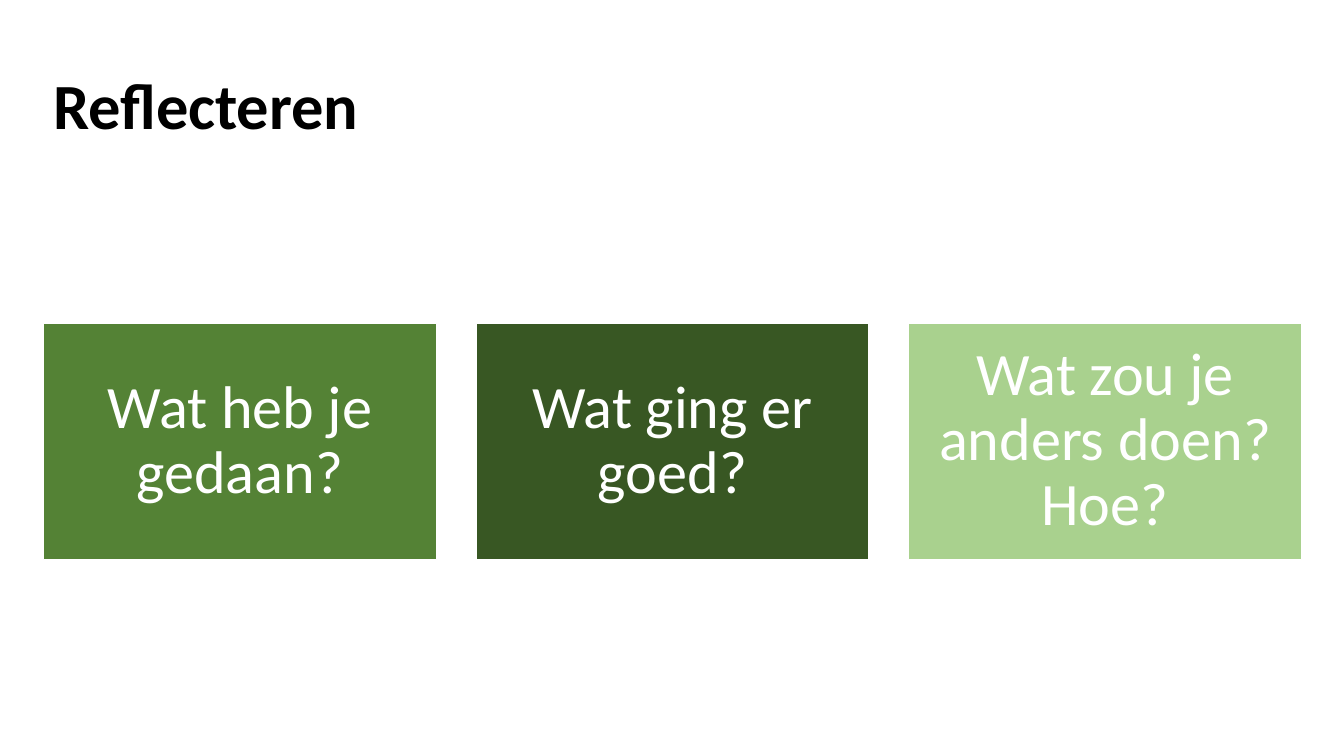
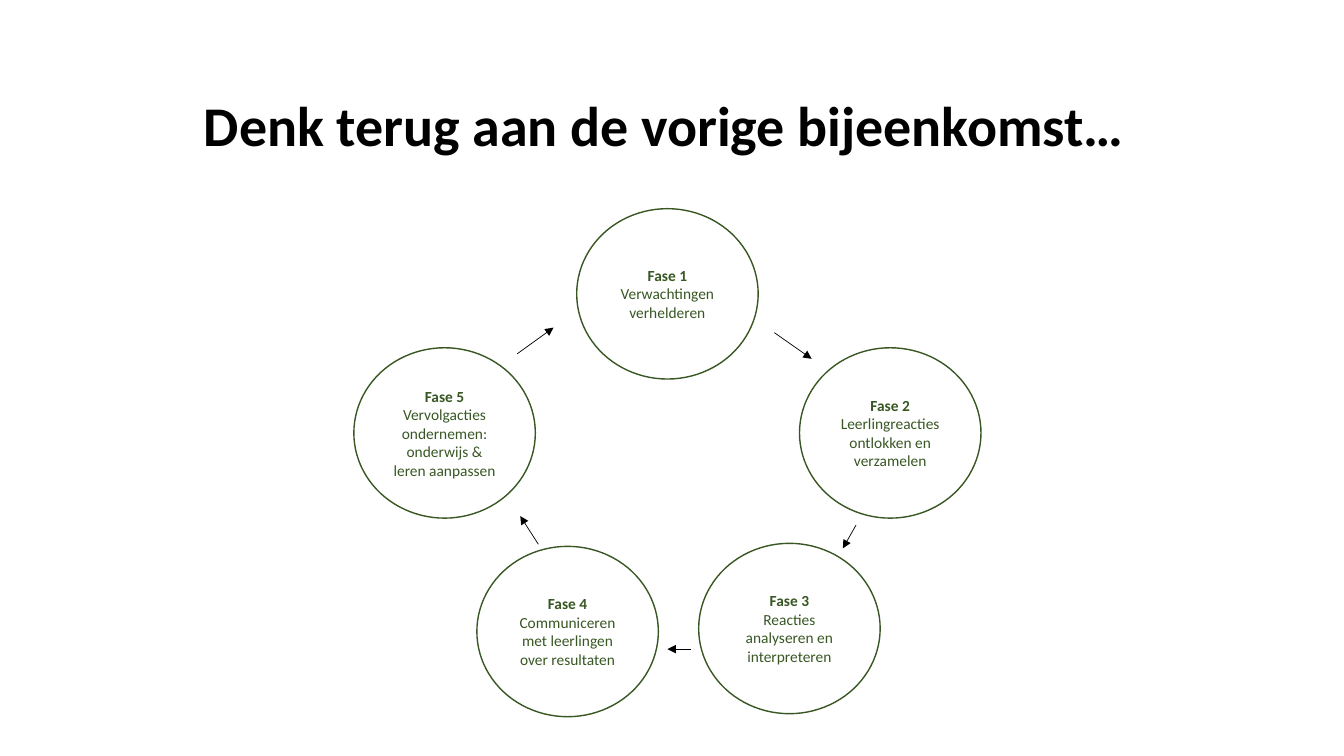
from dataclasses import dataclass

from lxml import etree
from pptx import Presentation
from pptx import util as u
from pptx.dml.color import RGBColor
from pptx.enum import shapes, text
from pptx.oxml import ns


@dataclass(frozen=True)
class Theme:
    font: str = "Calibri"
    black: str = "000000"
    white: str = "FFFFFF"
    dark_green: str = "385723"
    green: str = "548235"
    light_green: str = "A9D18E"
    title_size: int = 46
    centred_title_size: int = 40
    card_size: int = 43
    phase_size: int = 11
    outline: float = 1
    arrow_line: float = 0.5


THEME = Theme()
LEFT, CENTER = text.PP_ALIGN.LEFT, text.PP_ALIGN.CENTER


def write(frame, lines, *, size, color, bold_lines=0, align=CENTER,
          spacing=1.0, inset=None):
    """Fill a frame with one paragraph per line; the first bold_lines are bold."""
    frame.word_wrap = True
    frame.vertical_anchor = text.MSO_ANCHOR.MIDDLE
    if inset is not None:
        frame.margin_left = frame.margin_right = u.Inches(inset)
        frame.margin_top = frame.margin_bottom = u.Inches(inset)
    for index, line in enumerate(lines):
        paragraph = frame.paragraphs[0] if index == 0 else frame.add_paragraph()
        paragraph.alignment = align
        paragraph.line_spacing = spacing
        run = paragraph.add_run()
        run.text = line
        run.font.name = THEME.font
        run.font.size = u.Pt(size)
        run.font.bold = index < bold_lines
        run.font.color.rgb = RGBColor.from_string(color)


class Deck:
    """Holds the presentation, its style and the current slide."""

    def __init__(self, theme):
        self.theme = theme
        self.presentation = Presentation()
        self.presentation.slide_width = u.Inches(13.33)
        self.presentation.slide_height = u.Inches(7.5)
        self.slide = None

    def new_slide(self):
        self.slide = self.presentation.slides.add_slide(
            self.presentation.slide_layouts[6])

    def title(self, words, box, size, align=LEFT):
        shape = self.slide.shapes.add_textbox(*map(u.Inches, box))
        write(shape.text_frame, [words], size=size, color=self.theme.black,
              bold_lines=1, align=align, spacing=0.9)

    def outlined(self, kind, box, fill, line):
        shape = self.slide.shapes.add_shape(kind, *map(u.Inches, box))
        shape.shadow.inherit = False
        shape.fill.solid()
        shape.fill.fore_color.rgb = RGBColor.from_string(fill)
        shape.line.color.rgb = RGBColor.from_string(line)
        shape.line.width = u.Pt(self.theme.outline)
        return shape

    def card(self, words, box, fill):
        shape = self.outlined(shapes.MSO_SHAPE.RECTANGLE, box, fill,
                              self.theme.white)
        write(shape.text_frame, [words], size=self.theme.card_size,
              color=self.theme.white, spacing=0.9, inset=0.18)

    def phase(self, number, words, box):
        shape = self.outlined(shapes.MSO_SHAPE.OVAL, box, self.theme.white,
                              self.theme.dark_green)
        write(shape.text_frame, [f"Fase {number}", words], bold_lines=1,
              size=self.theme.phase_size, color=self.theme.dark_green)

    def arrow(self, start, end):
        connector = self.slide.shapes.add_connector(
            shapes.MSO_CONNECTOR.STRAIGHT, *map(u.Inches, start + end))
        connector.line.color.rgb = RGBColor.from_string(self.theme.black)
        connector.line.width = u.Pt(self.theme.arrow_line)
        properties = connector.line._get_or_add_ln()
        etree.SubElement(properties, ns.qn("a:tailEnd"), type="triangle")
        etree.SubElement(properties.getparent(), ns.qn("a:effectLst"))


def reflection_slide(deck):
    deck.new_slide()
    deck.title("Reflecteren", (0.43, 0.35, 12.48, 1.45), THEME.title_size)

    # Three equal question cards
    left, width, gap = 0.43, 3.9, 0.39
    cards = [
        ("Wat heb je gedaan?", THEME.green),
        ("Wat ging er goed?", THEME.dark_green),
        ("Wat zou je anders doen? Hoe?", THEME.light_green),
    ]
    for index, (words, fill) in enumerate(cards):
        deck.card(words, (left + index * (width + gap), 3.21, width, 2.34), fill)


def cycle_slide(deck):
    deck.new_slide()
    deck.title("Denk terug aan de vorige bijeenkomst…", (1.04, 0.55, 11.09, 1.45),
               THEME.centred_title_size, align=CENTER)

    # Phases, clockwise from the top
    phases = [
        ("Verwachtingen verhelderen", 5.72, 2.07),
        ("Leerlingreacties ontlokken en verzamelen", 7.93, 3.45),
        ("Reacties analyseren en interpreteren", 6.93, 5.39),
        ("Communiceren met leerlingen over resultaten", 4.73, 5.42),
        ("Vervolgacties ondernemen: onderwijs & leren aanpassen", 3.51, 3.45),
    ]
    for number, (words, left, top) in enumerate(phases, start=1):
        deck.phase(number, words, (left, top, 1.8, 1.69))

    # Arrows from each phase to the next
    arrows = [
        ((7.68, 3.3), (8.05, 3.56)),
        ((8.49, 5.21), (8.36, 5.44)),
        ((6.85, 6.44), (6.62, 6.44)),
        ((5.34, 5.4), (5.16, 5.12)),
        ((5.13, 3.51), (5.49, 3.25)),
    ]
    for start, end in arrows:
        deck.arrow(start, end)


def main():
    deck = Deck(THEME)
    reflection_slide(deck)
    cycle_slide(deck)
    deck.presentation.save("out.pptx")


if __name__ == "__main__":
    main()
